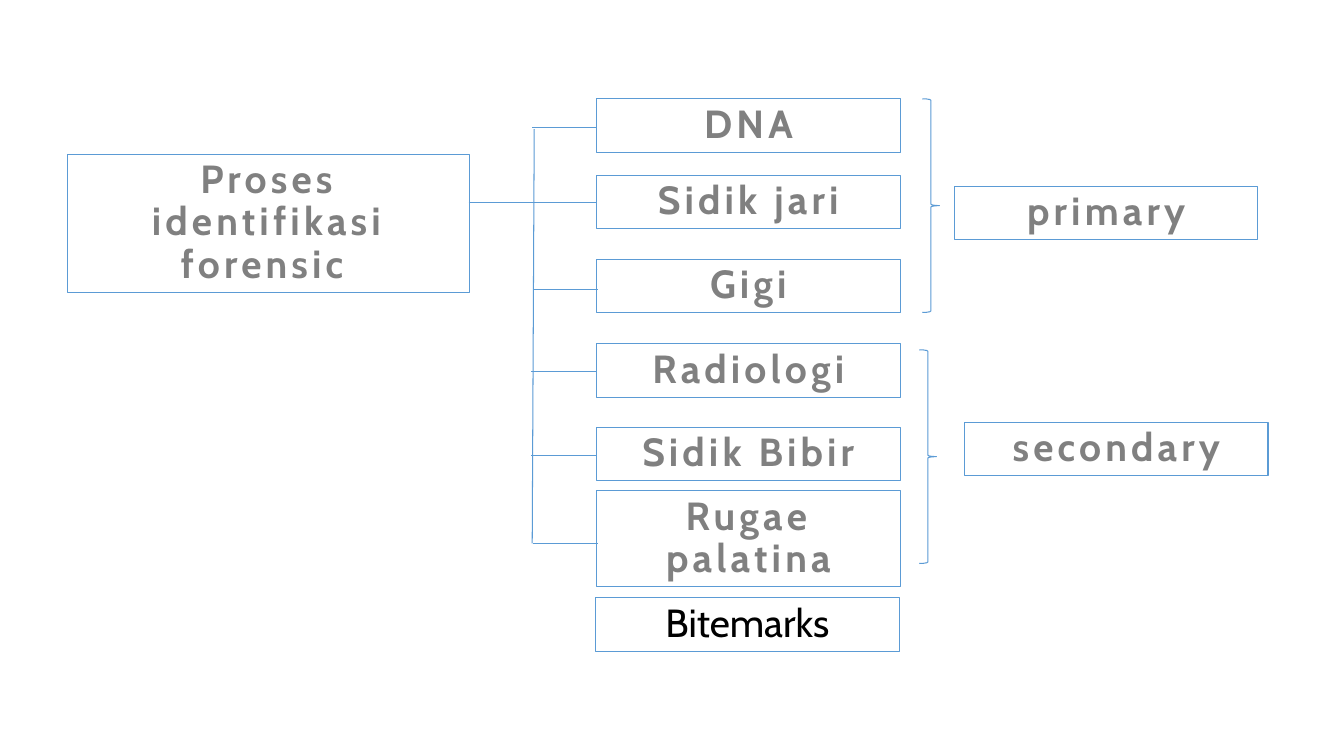
from lxml import etree
from pptx import Presentation
from pptx.dml.color import RGBColor
from pptx.enum.shapes import MSO_CONNECTOR, MSO_SHAPE
from pptx.enum.text import MSO_ANCHOR, MSO_AUTO_SIZE, PP_ALIGN
from pptx.oxml.ns import qn
from pptx.util import Pt

RECTANGLE = MSO_SHAPE.RECTANGLE
RIGHT_BRACE = MSO_SHAPE.RIGHT_BRACE
STRAIGHT = MSO_CONNECTOR.STRAIGHT
MIDDLE = MSO_ANCHOR.MIDDLE
CENTER = PP_ALIGN.CENTER
FIT_SHAPE = MSO_AUTO_SIZE.SHAPE_TO_FIT_TEXT

COLORS = {"outline": "5B9BD5", "label": "808080", "plain": "000000"}
FONT = "Cabin"
BOX_WIDTH = 216.72
BOX_HEIGHT = 38.16
METHOD_LEFT = 426.24
METHODS = [
    ("DNA", 70.56, BOX_HEIGHT),
    ("Sidik jari", 125.28, BOX_HEIGHT),
    ("Gigi", 185.04, BOX_HEIGHT),
    ("Radiologi", 245.52, BOX_HEIGHT),
    ("Sidik Bibir", 305.28, BOX_HEIGHT),
    ("Rugae palatina", 350.64, 68.4),
]
GROUPS = [
    ("primary", 681.84, 133.2, 658.8, 70.56),
    ("secondary", 689.04, 301.68, 656.64, 249.84),
]
LINES = [
    (381.6, 92.16, 380.16, 388.08),
    (334.8, 144.72, 425.52, 144.72),
]
BRANCH_LENGTH = 46.08
BRANCHES = [
    (380.16, 91.44),
    (380.88, 206.64),
    (379.44, 265.68),
    (379.44, 325.44),
    (380.88, 388.08),
]


def color(name):
    return RGBColor.from_string(COLORS[name])


def style_outline(item):
    item.line.color.rgb = color("outline")
    item.line.width = Pt(0.75)


def add_outline_shape(page, kind, left, top, width, height):
    shape = page.shapes.add_shape(kind, Pt(left), Pt(top), Pt(width), Pt(height))
    shape.shadow.inherit = False
    shape.fill.background()
    style_outline(shape)
    return shape


def write_text(box, text, ink="label", bold=True, spacing=3):
    frame = box.text_frame
    frame.word_wrap = True
    frame.auto_size = FIT_SHAPE
    frame.vertical_anchor = MIDDLE
    para = frame.paragraphs[0]
    para.alignment = CENTER
    para.line_spacing = 0.9
    span = para.add_run()
    span.text = text
    span.font.name = FONT
    span.font.size = Pt(28)
    span.font.bold = bold
    span.font.color.rgb = color(ink)
    if spacing:
        span.font._element.set("spc", str(spacing * 100))


def add_box(page, text, left, top, width=BOX_WIDTH, height=BOX_HEIGHT, **text_format):
    box = add_outline_shape(page, RECTANGLE, left, top, width, height)
    write_text(box, text, **text_format)


def add_line(page, start_x, start_y, end_x, end_y):
    line = page.shapes.add_connector(
        STRAIGHT, Pt(start_x), Pt(start_y), Pt(end_x), Pt(end_y)
    )
    style_outline(line)
    etree.SubElement(line._element.spPr, qn("a:effectLst"))


def main():
    deck = Presentation()
    deck.slide_width = Pt(960)
    deck.slide_height = Pt(540)
    page = deck.slides.add_slide(deck.slide_layouts[6])

    add_box(page, "Proses identifikasi forensic ", 48.24, 110.16, 287.28, 98.64)
    for text, top, height in METHODS:
        add_box(page, text, METHOD_LEFT, top, height=height)
    add_box(page, "Bitemarks", 425.52, 426.96, ink="plain", bold=False, spacing=0)

    for ends in LINES:
        add_line(page, *ends)
    for left, y in BRANCHES:
        add_line(page, left, y, left + BRANCH_LENGTH, y)

    for text, left, top, brace_left, brace_top in GROUPS:
        add_outline_shape(page, RIGHT_BRACE, brace_left, brace_top, 12.24, 152.64)
        add_box(page, text, left, top)

    deck.save("out.pptx")


if __name__ == "__main__":
    main()
